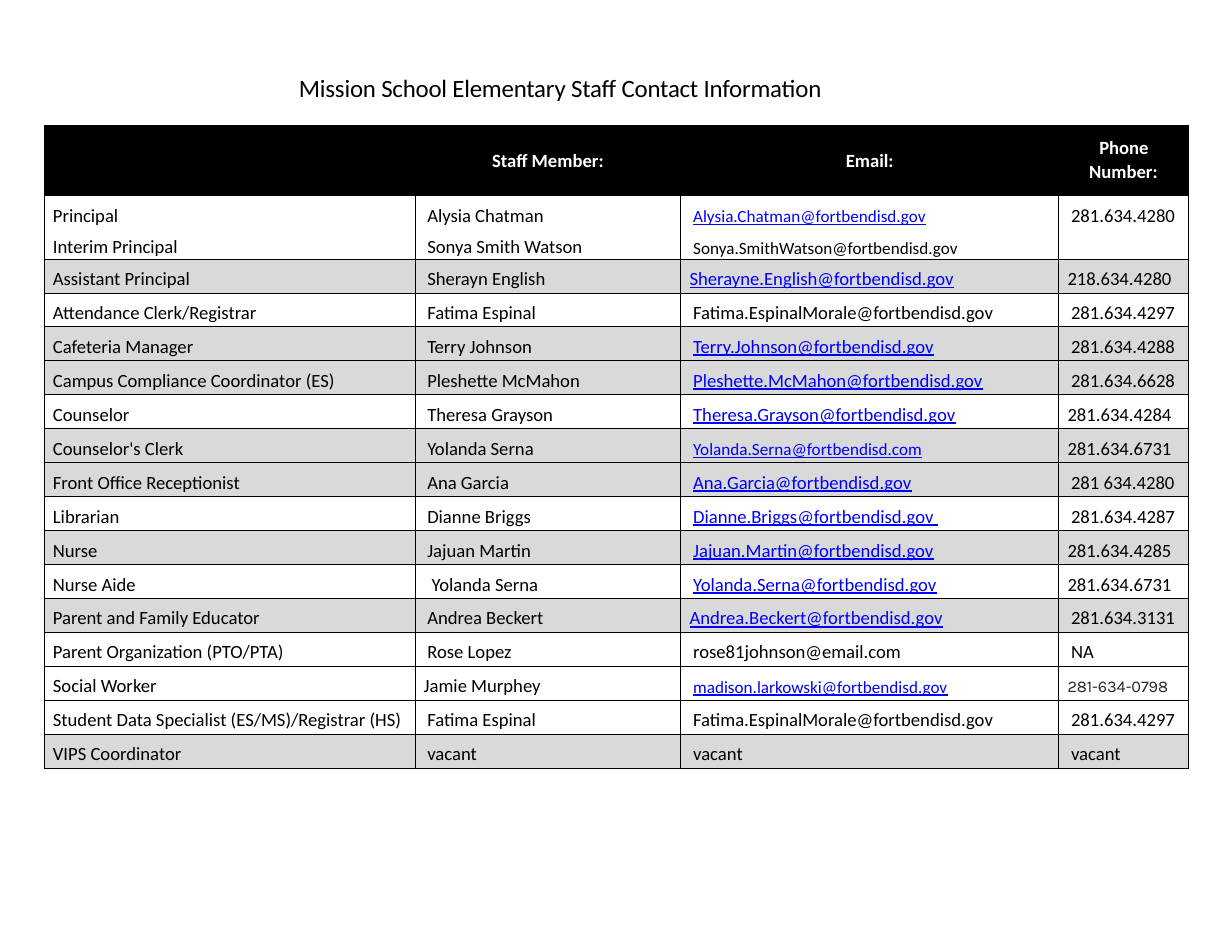
import pptx
import pptx.util
import pptx.dml.color
import pptx.enum.text
import pptx.oxml.ns
from lxml import etree

Cm, Pt = pptx.util.Cm, pptx.util.Pt
ALIGN = pptx.enum.text.PP_ALIGN
HUES = {"ink": "000000", "head": "FFFFFF", "band": "D9D9D9",
        "link": "0000FF", "grey": "252525"}
HEADS = ["", "Staff Member:", "Email:", "Phone Number:"]
STAFF = [
    ("Principal\nInterim Principal", "Alysia Chatman\nSonya Smith Watson",
     "Alysia.Chatman@fortbendisd.gov\nSonya.SmithWatson@fortbendisd.gov", "281.634.4280"),
    ("Assistant Principal", "Sherayn English", "Sherayne.English@fortbendisd.gov", "218.634.4280"),
    ("Attendance Clerk/Registrar", "Fatima Espinal",
     "Fatima.EspinalMorale@fortbendisd.gov", "281.634.4297"),
    ("Cafeteria Manager", "Terry Johnson", "Terry.Johnson@fortbendisd.gov", "281.634.4288"),
    ("Campus Compliance Coordinator (ES)", "Pleshette McMahon",
     "Pleshette.McMahon@fortbendisd.gov", "281.634.6628"),
    ("Counselor", "Theresa Grayson", "Theresa.Grayson@fortbendisd.gov", "281.634.4284"),
    ("Counselor's Clerk", "Yolanda Serna", "Yolanda.Serna@fortbendisd.com", "281.634.6731"),
    ("Front Office Receptionist", "Ana Garcia", "Ana.Garcia@fortbendisd.gov", "281 634.4280"),
    ("Librarian", "Dianne Briggs", "Dianne.Briggs@fortbendisd.gov ", "281.634.4287"),
    ("Nurse", "Jajuan Martin", "Jajuan.Martin@fortbendisd.gov", "281.634.4285"),
    ("Nurse Aide", "Yolanda Serna", "Yolanda.Serna@fortbendisd.gov", "281.634.6731"),
    ("Parent and Family Educator", "Andrea Beckert",
     "Andrea.Beckert@fortbendisd.gov", "281.634.3131"),
    ("Parent Organization (PTO/PTA)", "Rose Lopez", "rose81johnson@email.com", "NA"),
    ("Social Worker", "Jamie Murphey", "madison.larkowski@fortbendisd.gov", "281-634-0798"),
    ("Student Data Specialist (ES/MS)/Registrar (HS)", "Fatima Espinal",
     "Fatima.EspinalMorale@fortbendisd.gov", "281.634.4297"),
    ("VIPS Coordinator", "vacant", "vacant", "vacant"),
]
BANDS = {2, 4, 5, 7, 8, 10, 12, 16}
PLAIN = ("Sonya", "Fatima", "rose81")
SMALL = {(1, 2), (7, 2), (14, 2)}
NEAR = {(2, 2), (2, 3), (6, 3), (7, 3), (10, 3), (11, 3), (12, 2), (14, 1), (14, 3)}


def style(para, size, hue, face="Calibri", bold=False, link=False):
    font = para.font
    font.size, font.name, font.bold = Pt(size), face, bold
    font.underline = link
    font.color.rgb = pptx.dml.color.RGBColor.from_string(HUES[hue])


def dress(cell, fill, top):
    """Set the fill, the insets and a thin border on all four sides."""
    cell.margin_left = cell.margin_right = cell.margin_bottom = 0
    cell.margin_top = Cm(top)
    props = cell._tc.get_or_add_tcPr()
    for side in ("lnL", "lnR", "lnT", "lnB"):
        line = etree.SubElement(props, pptx.oxml.ns.qn("a:" + side), w=str(Pt(0.5)))
        paint = etree.SubElement(line, pptx.oxml.ns.qn("a:solidFill"))
        etree.SubElement(paint, pptx.oxml.ns.qn("a:srgbClr"), val=HUES["ink"])
    if fill:
        cell.fill.solid()
        cell.fill.fore_color.rgb = pptx.dml.color.RGBColor.from_string(HUES[fill])
    else:
        cell.fill.background()


deck = pptx.Presentation()
deck.slide_width, deck.slide_height = Cm(27.94), Cm(21.59)
slide = deck.slides.add_slide(deck.slide_layouts[5])

title = slide.shapes.title
title.left, title.top, title.width, title.height = Cm(6.78), Cm(1.65), Cm(14.4), Cm(0.71)
frame = title.text_frame
frame.margin_left = frame.margin_right = frame.margin_top = frame.margin_bottom = 0
frame.vertical_anchor = pptx.enum.text.MSO_ANCHOR.TOP
frame.auto_size = pptx.enum.text.MSO_AUTO_SIZE.NONE
frame.text = "Mission School Elementary Staff Contact Information"
para = frame.paragraphs[0]
para.alignment = ALIGN.LEFT
style(para, 16, "ink")
para.runs[0].font._element.set("spc", "-10")

table = slide.shapes.add_table(len(STAFF) + 1, 4, Cm(1), Cm(2.85), Cm(25.94), Cm(14.6)).table
table.first_row = table.horz_banding = False
for col, width in zip(table.columns, (8.41, 6.03, 8.57, 2.93)):
    col.width = Cm(width)
for row in table.rows:
    row.height = Cm(0.77)
table.rows[0].height = Cm(1.59)
table.rows[1].height = Cm(1.43)

for c, text in enumerate(HEADS):
    cell = table.cell(0, c)
    dress(cell, "ink", 0.25 if c == 3 else 0.55)
    cell.text = text
    para = cell.text_frame.paragraphs[0]
    style(para, 12, "head", bold=True)
    if c == 1:
        para._p.get_or_add_pPr().set("marL", str(Cm(1.75)))
    elif c == 2:
        para.alignment = ALIGN.CENTER
    elif c == 3:
        para.line_spacing = 1.02
        props = para._p.get_or_add_pPr()
        props.set("marL", str(Cm(0.69)))
        props.set("indent", str(Cm(0.23)))

for r, person in enumerate(STAFF, 1):
    for c, text in enumerate(person):
        cell = table.cell(r, c)
        small, karla = (r, c) in SMALL, (r, c) == (14, 3)
        dress(cell, "band" if r in BANDS else None, 0.26 if karla else 0.24 if small else 0.2)
        cell.text = text
        indent = 0.2 if c == 0 or (r, c) in NEAR else 0.28
        if (r, c) == (11, 1):
            indent = 0.38
        for para in cell.text_frame.paragraphs:
            para._p.get_or_add_pPr().set("marL", str(Cm(indent)))
            para.space_before = Pt(6.6 if small else 5.6)
            link = "@" in para.text and not para.text.startswith(PLAIN)
            if karla:
                style(para, 10.5, "grey", "Karla")
            else:
                style(para, 11 if small else 12, "link" if link else "ink", link=link)

deck.save("out.pptx")
